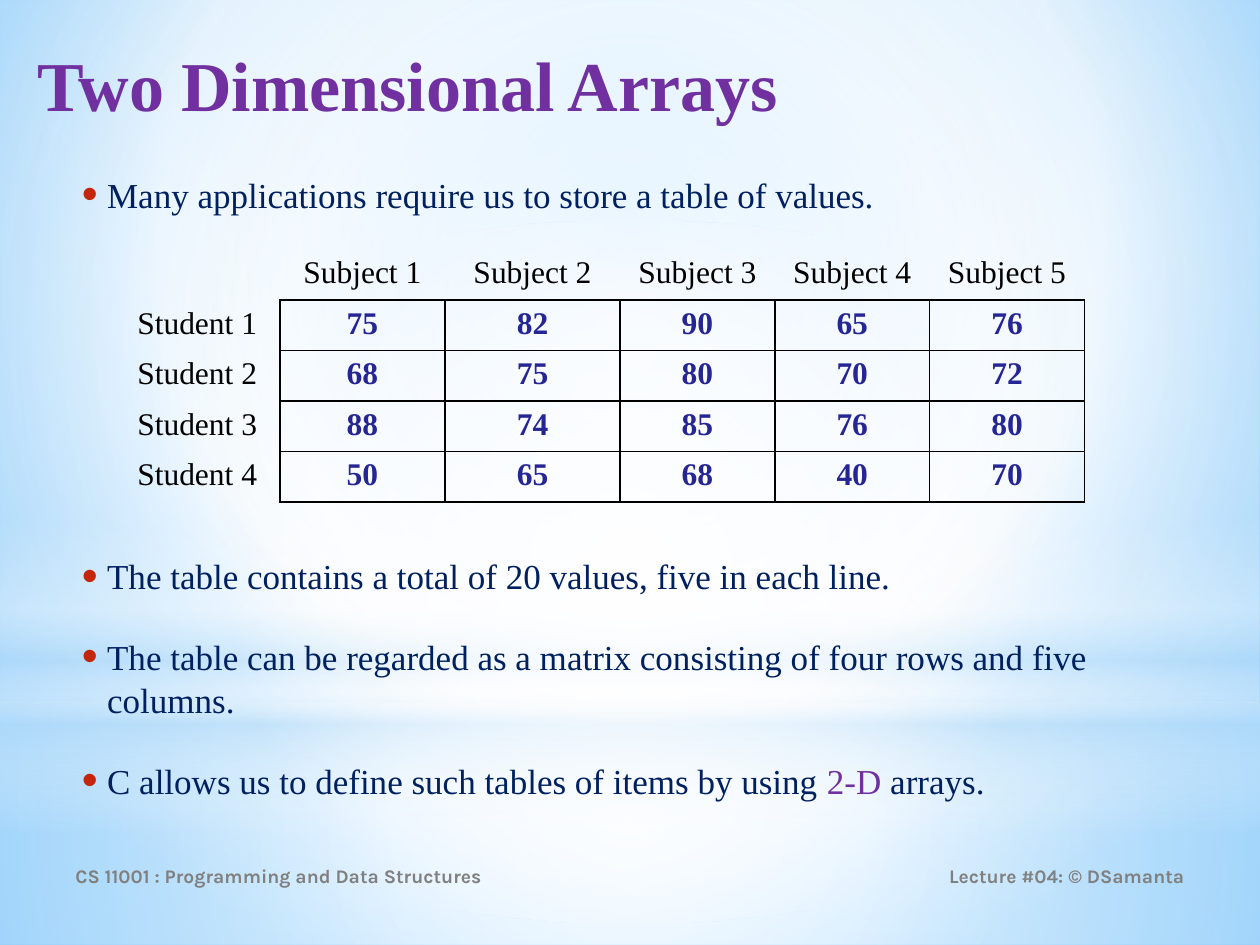
from dataclasses import dataclass
from pptx import Presentation
from pptx.dml.color import RGBColor
from pptx.enum.shapes import MSO_SHAPE
from pptx.enum.text import MSO_ANCHOR, PP_ALIGN
from pptx.oxml import parse_xml
from pptx.oxml.ns import nsdecls, qn
from pptx.util import Cm, Pt

RECT, OVAL = MSO_SHAPE.RECTANGLE, MSO_SHAPE.OVAL
TOP, MIDDLE = MSO_ANCHOR.TOP, MSO_ANCHOR.MIDDLE
LEFT, CENTER, RIGHT = PP_ALIGN.LEFT, PP_ALIGN.CENTER, PP_ALIGN.RIGHT
NS = nsdecls("a")


@dataclass(frozen=True)
class Theme:
    serif: str = "Times New Roman"
    sans: str = "Karla"
    white: str = "FFFFFF"
    sky: str = "B4DCFA"
    violet: str = "7030A0"
    navy: str = "002060"
    bullet: str = "C3260C"
    grey: str = "808080"
    black: str = "000000"
    score: str = "252595"
    title: int = 40
    body: int = 20
    cell: int = 18
    foot: int = 11


T = Theme()


def shade(node, stops, way):
    """Replace the solid fill inside node with a gradient of (position, colour, alpha)."""
    marks = "".join(
        f'<a:gs pos="{pos * 1000}"><a:srgbClr val="{tone}">'
        f'<a:alpha val="{alpha * 1000}"/></a:srgbClr></a:gs>'
        for pos, tone, alpha in stops)
    solid = node.find(".//" + qn("a:solidFill"))
    solid.getparent().replace(solid, parse_xml(
        f'<a:gradFill {NS} rotWithShape="1"><a:gsLst>{marks}</a:gsLst>{way}</a:gradFill>'))


def write(para, text, size, tone, bold=False, face=T.serif):
    run = para.add_run()
    run.text = text
    for key, val in {"size": Pt(size), "bold": bold, "name": face}.items():
        setattr(run.font, key, val)
    run.font.color.rgb = RGBColor.from_string(tone)


deck = Presentation()
deck.slide_width, deck.slide_height = Cm(25.4), Cm(19.05)
slide = deck.slides.add_slide(deck.slide_layouts[6])
shapes = slide.shapes

# Background and light bands
ring = '<a:path path="circle"><a:fillToRect l="{}" t="{}" r="{}" b="{}"/></a:path>'
core = ring.format(*[50000] * 4)
down = '<a:lin ang="5400000" scaled="0"/>'
slide.background.fill.solid()
shade(slide.element.find(".//" + qn("p:bgPr")),
      [(0, "9ED5FF", 100), (60, T.white, 100), (100, "5BB9FF", 100)],
      ring.format(20000, 10000, 20000, 60000))

bands = [
    (RECT, 14.17, 4.88, core, [(0, T.white, 91), (37, T.white, 76), (100, T.sky, 79)]),
    (RECT, 0, 14.17, core, [(0, T.white, 89), (48, T.white, 62), (100, T.sky, 79)]),
    (RECT, 10.46, 6.35, down, [(0, T.white, 0), (29, T.white, 30), (45, T.sky, 40),
                               (55, T.white, 26), (65, T.sky, 60), (100, T.white, 0)]),
    (OVAL, 4.45, 14.17, core, [(0, T.white, 100), (56, T.white, 0)]),
]
for kind, top, high, way, stops in bands:
    band = shapes.add_shape(kind, 0, Cm(top), deck.slide_width, Cm(high))
    band.shadow.inherit = False
    band.line.fill.background()
    band.fill.solid()
    shade(band.element, stops, way)

# Text boxes: left, top, width, height, anchor, top inset, align, first run
boxes = [
    (0.5, 0.53, 24.2, 3.18, TOP, 0.3, LEFT,
     ("Two Dimensional Arrays", T.title, T.violet, True)),
    (1.27, 3.33, 23.24, 13.2, TOP, 0.13, LEFT, None),
    (17.15, 17.15, 6.98, 1.02, MIDDLE, 0.13, RIGHT,
     ("Lecture #04: © DSamanta", T.foot, T.grey, True, T.sans)),
    (1.27, 17.15, 9.32, 1.02, MIDDLE, 0.13, LEFT,
     ("CS 11001 : Programming and Data Structures", T.foot, T.grey, True, T.sans)),
]
frames = []
for left, top, wide, high, anchor, inset, align, run in boxes:
    frame = shapes.add_textbox(Cm(left), Cm(top), Cm(wide), Cm(high)).text_frame
    look = {"word_wrap": True, "vertical_anchor": anchor, "margin_top": Cm(inset)}
    for key, val in look.items():
        setattr(frame, key, val)
    frame.paragraphs[0].alignment = align
    if run:
        write(frame.paragraphs[0], *run)
    frames.append(frame)

# Bulleted points: space before, runs
points = [
    (2, [("Many applications require us to store a table of values.", T.navy)]),
    (190, [("The table contains a total of 20 values, five in each line.", T.navy)]),
    (18, [("The table can be regarded as a matrix consisting of "
           "four rows and five columns.", T.navy)]),
    (18, [("C allows us to define such tables of items by using ", T.navy),
          ("2-D ", T.violet), ("arrays.", T.navy)]),
]
body = frames[1]
for i, (gap, runs) in enumerate(points):
    para = body.add_paragraph() if i else body.paragraphs[0]
    look = {"space_before": Pt(gap), "space_after": Pt(3), "line_spacing": 1.04}
    for key, val in look.items():
        setattr(para, key, val)
    props = para._p.get_or_add_pPr()
    props.set("marL", str(Cm(0.64)))
    props.set("indent", str(Cm(-0.51)))
    for mark in (f'<a:buClr {NS}><a:srgbClr val="{T.bullet}"/></a:buClr>',
                 f'<a:buSzPct {NS} val="130000"/>',
                 f'<a:buFont {NS} typeface="Arial"/>',
                 f'<a:buChar {NS} char="•"/>'):
        props.append(parse_xml(mark))
    for text, tone in runs:
        write(para, text, T.body, tone)

# Table of scores
scores = [
    [75, 82, 90, 65, 76],
    [68, 75, 80, 70, 72],
    [88, 74, 85, 76, 80],
    [50, 65, 68, 40, 70],
]
rows = [[""] + [f"Subject {n}" for n in range(1, 6)]]
rows += [[f"Student {n}"] + line for n, line in enumerate(scores, 1)]
widths = [3.33, 3.33, 3.53, 3.12, 3.12, 3.12]
grid = shapes.add_table(len(rows), len(widths), Cm(2.31), Cm(5.03),
                        Cm(sum(widths)), Cm(len(rows))).table
grid.first_row = grid.horz_banding = False
for col, wide in zip(grid.columns, widths):
    col.width = Cm(wide)
for r, line in enumerate(rows):
    grid.rows[r].height = Cm(1)
    for c, val in enumerate(line):
        cell = grid.cell(r, c)
        inner = r > 0 and c > 0
        ruled = {"L": inner, "R": inner or r > 0, "T": inner, "B": inner or c > 0}
        props = cell._tc.get_or_add_tcPr()
        for side, on in ruled.items():
            ink = (f'<a:solidFill><a:srgbClr val="{T.black}"/></a:solidFill>'
                   if on else "<a:noFill/>")
            props.append(parse_xml(f'<a:ln{side} {NS} w="{Pt(1)}">{ink}</a:ln{side}>'))
        cell.fill.background()
        para = cell.text_frame.paragraphs[0]
        para.alignment = CENTER
        if val:
            write(para, str(val), T.cell, T.score if inner else T.black, inner)

deck.save("out.pptx")
